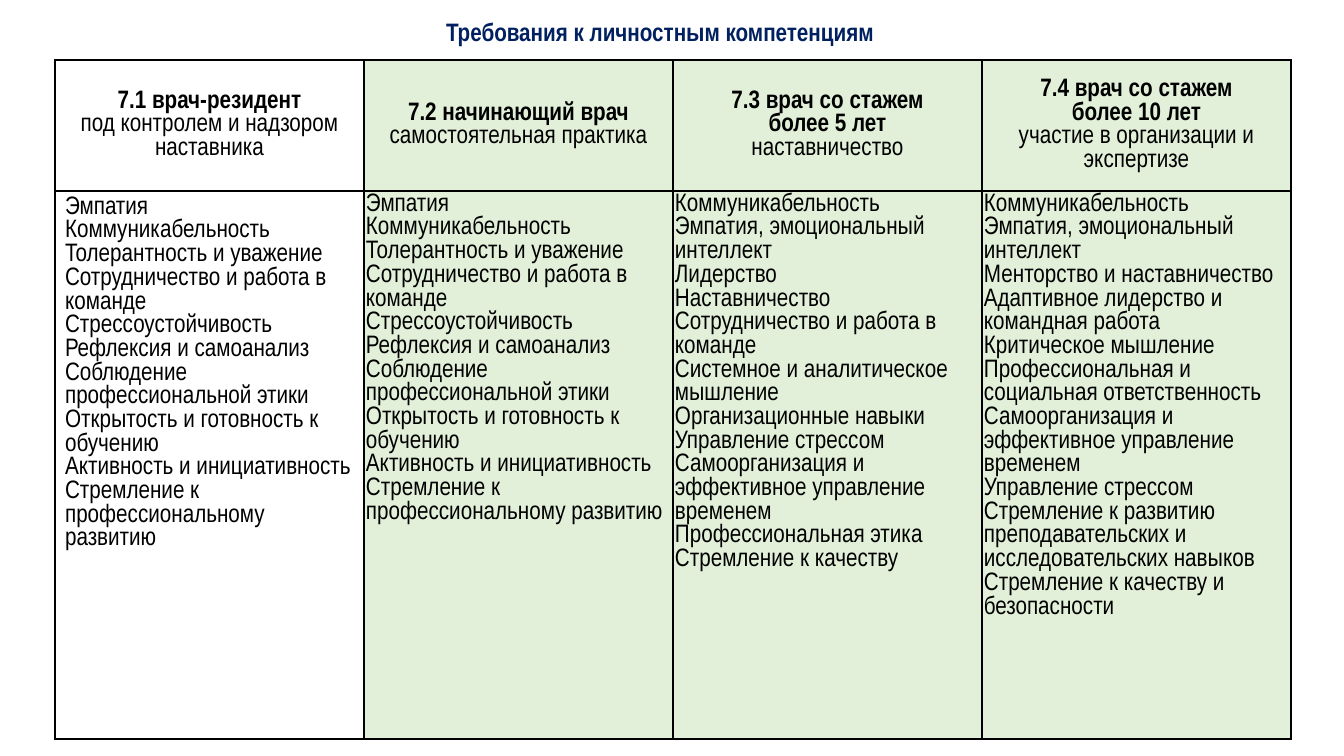
from pptx import Presentation
from pptx.dml.color import RGBColor as RGB
from pptx.enum.text import MSO_ANCHOR as ANCHOR, PP_ALIGN as ALIGN
from pptx.oxml import parse_xml
from pptx.oxml.ns import nsdecls
from pptx.util import Pt

PX = 914400 / 100.8
THEME = {
    "font": "Arial Narrow",
    "size": Pt(18),
    "title": RGB.from_string("002060"),
    "text": RGB.from_string("000000"),
    "plain": RGB.from_string("FFFFFF"),
    "green": RGB.from_string("E2F0D9"),
    "border": "000000",
}


def px(length):
    return round(length * PX)


def write(frame, lines, align, color):
    """Fill a text frame with (text, bold) lines, one paragraph each."""
    for number, (text, bold) in enumerate(lines):
        paragraph = frame.add_paragraph() if number else frame.paragraphs[0]
        paragraph.alignment = align
        run = paragraph.add_run()
        run.text = text
        run.font.color.rgb = color
        for name, value in {"name": THEME["font"], "size": THEME["size"], "bold": bold}.items():
            setattr(run.font, name, value)


# Content: bold heading lines, role, competencies
starting_skills = [
    "Эмпатия",
    "Коммуникабельность",
    "Толерантность и уважение",
    "Сотрудничество и работа в команде",
    "Стрессоустойчивость",
    "Рефлексия и самоанализ",
    "Соблюдение профессиональной этики",
    "Открытость и готовность к обучению",
    "Активность и инициативность",
    "Стремление к профессиональному развитию",
]
levels = [
    (["7.1 врач-резидент"], "под контролем и надзором наставника", starting_skills),
    (["7.2 начинающий врач"], "самостоятельная практика", starting_skills),
    (["7.3 врач со стажем", "более 5 лет"], "наставничество", [
        "Коммуникабельность",
        "Эмпатия, эмоциональный интеллект",
        "Лидерство",
        "Наставничество",
        "Сотрудничество и работа в команде",
        "Системное и аналитическое мышление",
        "Организационные навыки",
        "Управление стрессом",
        "Самоорганизация и эффективное управление временем",
        "Профессиональная этика",
        "Стремление к качеству",
    ]),
    (["7.4 врач со стажем", "более 10 лет"], "участие в организации и экспертизе", [
        "Коммуникабельность",
        "Эмпатия, эмоциональный интеллект",
        "Менторство и наставничество",
        "Адаптивное лидерство и командная работа",
        "Критическое мышление",
        "Профессиональная и социальная ответственность",
        "Самоорганизация и эффективное управление временем",
        "Управление стрессом",
        "Стремление к развитию преподавательских и исследовательских навыков",
        "Стремление к качеству и безопасности",
    ]),
]

deck = Presentation()
deck.slide_width, deck.slide_height = px(1344), px(756)
slide = deck.slides.add_slide(deck.slide_layouts[5])

# Title
heading = slide.shapes.title
for name, value in {"left": 436, "top": 11, "width": 456, "height": 40}.items():
    setattr(heading, name, px(value))
heading.text_frame.word_wrap = False
heading.text_frame.vertical_anchor = ANCHOR.MIDDLE
write(heading.text_frame, [("Требования к личностным компетенциям", True)],
      ALIGN.LEFT, THEME["title"])

# Competency table
row_heights = [131, 548]
column_width = 309
competencies = slide.shapes.add_table(
    len(row_heights), len(levels), px(55), px(60),
    px(column_width * len(levels)), px(sum(row_heights))).table
competencies.first_row = competencies.horz_banding = False
for row, height in zip(competencies.rows, row_heights):
    row.height = px(height)

for column, (names, role, skills) in enumerate(levels):
    competencies.columns[column].width = px(column_width)
    header, body = competencies.cell(0, column), competencies.cell(1, column)

    # Header and skills
    header.vertical_anchor = ANCHOR.MIDDLE
    write(header.text_frame, [(name, True) for name in names] + [(role, False)],
          ALIGN.CENTER, THEME["text"])
    write(body.text_frame, [(skill, False) for skill in skills], ALIGN.LEFT, THEME["text"])
    if column:
        for side in ("left", "top", "right", "bottom"):
            setattr(body, f"margin_{side}", px(2))

    # Fill and borders
    for cell in (header, body):
        cell.fill.solid()
        cell.fill.fore_color.rgb = THEME["green" if column else "plain"]
        properties = cell._tc.get_or_add_tcPr()
        for position, edge in enumerate(("lnL", "lnR", "lnT", "lnB")):
            properties.insert(position, parse_xml(
                f'<a:{edge} {nsdecls("a")} w="{Pt(1)}"><a:solidFill>'
                f'<a:srgbClr val="{THEME["border"]}"/></a:solidFill></a:{edge}>'))

deck.save("out.pptx")
